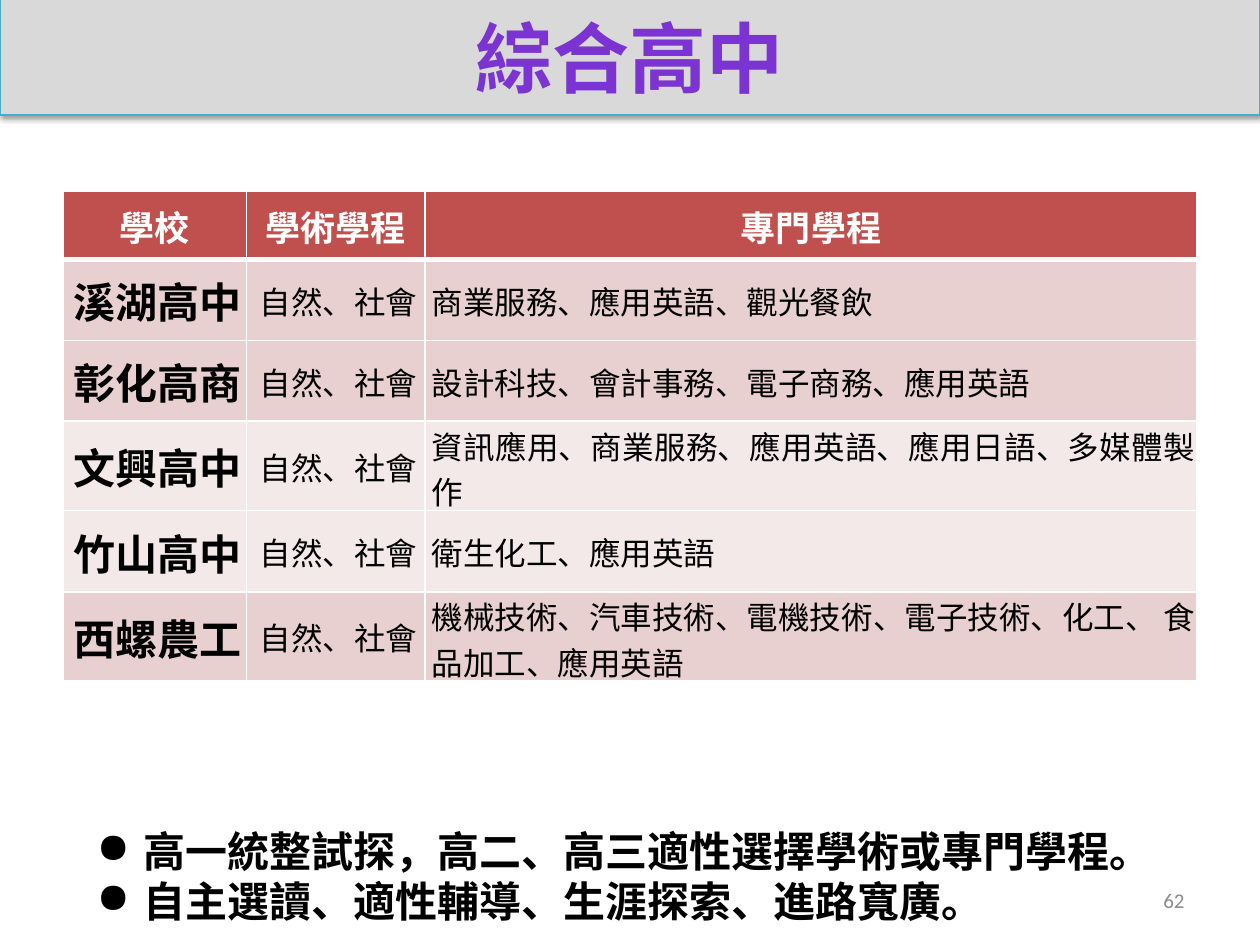
from dataclasses import dataclass

from lxml.etree import SubElement
from pptx import Presentation
from pptx.dml.color import RGBColor
from pptx.enum.shapes import MSO_SHAPE as Shape
from pptx.enum.text import MSO_ANCHOR as Anchor, PP_ALIGN as Align
from pptx.oxml.ns import qn
from pptx.util import Cm, Pt

COLORS = {
    "banner": "D9D9D9", "banner_line": "4BACC6", "title": "7B34D2",
    "header": "C0504D", "dark_band": "E8D0D0", "light_band": "F4E9E9",
    "white": "FFFFFF", "black": "000000", "page": "8C8C8C",
}
CJK = "Noto Sans CJK SC"
LATIN = "Calibri"


@dataclass
class Style:
    size: float
    color: str = "black"
    bold: bool = False
    font: str = LATIN
    align: Align = Align.LEFT


@dataclass
class School:
    name: str
    programs: str
    band: str
    height: float
    academic: str = "自然、社會"


SCHOOLS = [
    School("溪湖高中", "商業服務、應用英語、觀光餐飲", "dark_band", 1.63),
    School("彰化高商", "設計科技、會計事務、電子商務、應用英語", "dark_band", 1.63),
    School("文興高中", "資訊應用、商業服務、應用英語、應用日語、多媒體製作", "light_band", 1.8),
    School("竹山高中", "衛生化工、應用英語", "light_band", 1.64),
    School("西螺農工", "機械技術、汽車技術、電機技術、電子技術、化工、 食品加工、應用英語",
           "dark_band", 1.8),
]
HEADINGS = ["學校", "學術學程", "專門學程"]
HEADER_HEIGHT = 1.37
COLUMN_WIDTHS = [3.7, 3.6, 15.56]
NOTES = ["高一統整試探，高二、高三適性選擇學術或專門學程。",
         "自主選讀、適性輔導、生涯探索、進路寬廣。"]

HEADING_STYLE = Style(20, "white", True, align=Align.CENTER)
COLUMN_STYLES = [Style(24, bold=True, align=Align.CENTER),
                 Style(18, align=Align.CENTER),
                 Style(18, align=Align.JUSTIFY)]


def rgb(name: str) -> RGBColor:
    return RGBColor.from_string(COLORS[name])


def write(paragraph, text: str, style: Style) -> None:
    paragraph.alignment = style.align
    run = paragraph.add_run()
    run.text = text
    font = run.font
    font.size, font.bold, font.name = Pt(style.size), style.bold, style.font
    font.color.rgb = rgb(style.color)
    SubElement(font._element, qn("a:ea"), typeface=CJK)


def add_shadow(shape) -> None:
    effects = SubElement(shape._element.spPr, qn("a:effectLst"))
    shadow = SubElement(effects, qn("a:outerShdw"), blurRad=str(Pt(3.1)),
                        dist=str(Pt(1.6)), dir="5400000", rotWithShape="0")
    color = SubElement(shadow, qn("a:srgbClr"), val=COLORS["black"])
    SubElement(color, qn("a:alpha"), val="38000")


def add_borders(cell, top: float, bottom: float) -> None:
    properties = cell._tc.get_or_add_tcPr()
    sides = [("a:lnL", 1), ("a:lnR", 1), ("a:lnT", top), ("a:lnB", bottom)]
    for position, (tag, width) in enumerate(sides):
        line = SubElement(properties, qn(tag), w=str(Pt(width)))
        fill = SubElement(line, qn("a:solidFill"))
        SubElement(fill, qn("a:srgbClr"), val=COLORS["white"])
        properties.insert(position, line)


def fill_cell(cell, text: str, style: Style, fill: str, top=1, bottom=1, indent=0.0) -> None:
    cell.margin_left = cell.margin_right = cell.margin_top = Cm(0.03)
    cell.margin_bottom = Cm(0)
    cell.vertical_anchor = Anchor.MIDDLE
    cell.fill.solid()
    cell.fill.fore_color.rgb = rgb(fill)
    add_borders(cell, top, bottom)
    paragraph = cell.text_frame.paragraphs[0]
    if indent:
        paragraph._p.get_or_add_pPr().set("marL", str(Cm(indent)))
    write(paragraph, text, style)


def add_banner(slide) -> None:
    banner = slide.shapes.add_shape(Shape.RECTANGLE, Cm(0), Cm(-0.05), Cm(25.4), Cm(2.37))
    banner.fill.solid()
    banner.fill.fore_color.rgb = rgb("banner")
    banner.line.color.rgb = rgb("banner_line")
    banner.line.width = Pt(0.75)
    add_shadow(banner)
    banner.text_frame.vertical_anchor = Anchor.MIDDLE
    write(banner.text_frame.paragraphs[0], "綜合高中",
          Style(44, "title", True, CJK, Align.CENTER))


def add_school_table(slide) -> None:
    heights = [HEADER_HEIGHT] + [school.height for school in SCHOOLS]
    table = slide.shapes.add_table(
        len(heights), len(HEADINGS), Cm(1.27), Cm(3.86),
        Cm(sum(COLUMN_WIDTHS)), Cm(sum(heights))).table
    for column, width in zip(table.columns, COLUMN_WIDTHS):
        column.width = Cm(width)
    for row, height in zip(table.rows, heights):
        row.height = Cm(height)
    for col, heading in enumerate(HEADINGS):
        fill_cell(table.cell(0, col), heading, HEADING_STYLE, "header", bottom=3)
    for row, school in enumerate(SCHOOLS, start=1):
        texts = [school.name, school.academic, school.programs]
        for col, (text, style) in enumerate(zip(texts, COLUMN_STYLES)):
            fill_cell(table.cell(row, col), text, style, school.band,
                      top=3 if row == 1 else 1, indent=0.1)


def add_notes(slide) -> None:
    frame = slide.shapes.add_textbox(Cm(1.7), Cm(16.51), Cm(22), Cm(2.31)).text_frame
    frame.word_wrap = True
    for index, note in enumerate(NOTES):
        paragraph = frame.add_paragraph() if index else frame.paragraphs[0]
        properties = paragraph._p.get_or_add_pPr()
        properties.set("marL", str(Cm(0.95)))
        properties.set("indent", str(Cm(-0.95)))
        SubElement(properties, qn("a:buChar"), char="●")
        write(paragraph, note, Style(24, bold=True, font=CJK))


def add_page_number(slide) -> None:
    frame = slide.shapes.add_textbox(Cm(18.2), Cm(17.65), Cm(5.93), Cm(1.01)).text_frame
    frame.word_wrap = True
    frame.vertical_anchor = Anchor.MIDDLE
    write(frame.paragraphs[0], "62", Style(12, "page", align=Align.RIGHT))


def main() -> None:
    deck = Presentation()
    deck.slide_width, deck.slide_height = Cm(25.4), Cm(19.05)
    slide = deck.slides.add_slide(deck.slide_layouts[6])
    add_banner(slide)
    add_page_number(slide)
    add_notes(slide)
    add_school_table(slide)
    deck.save("out.pptx")


if __name__ == "__main__":
    main()
